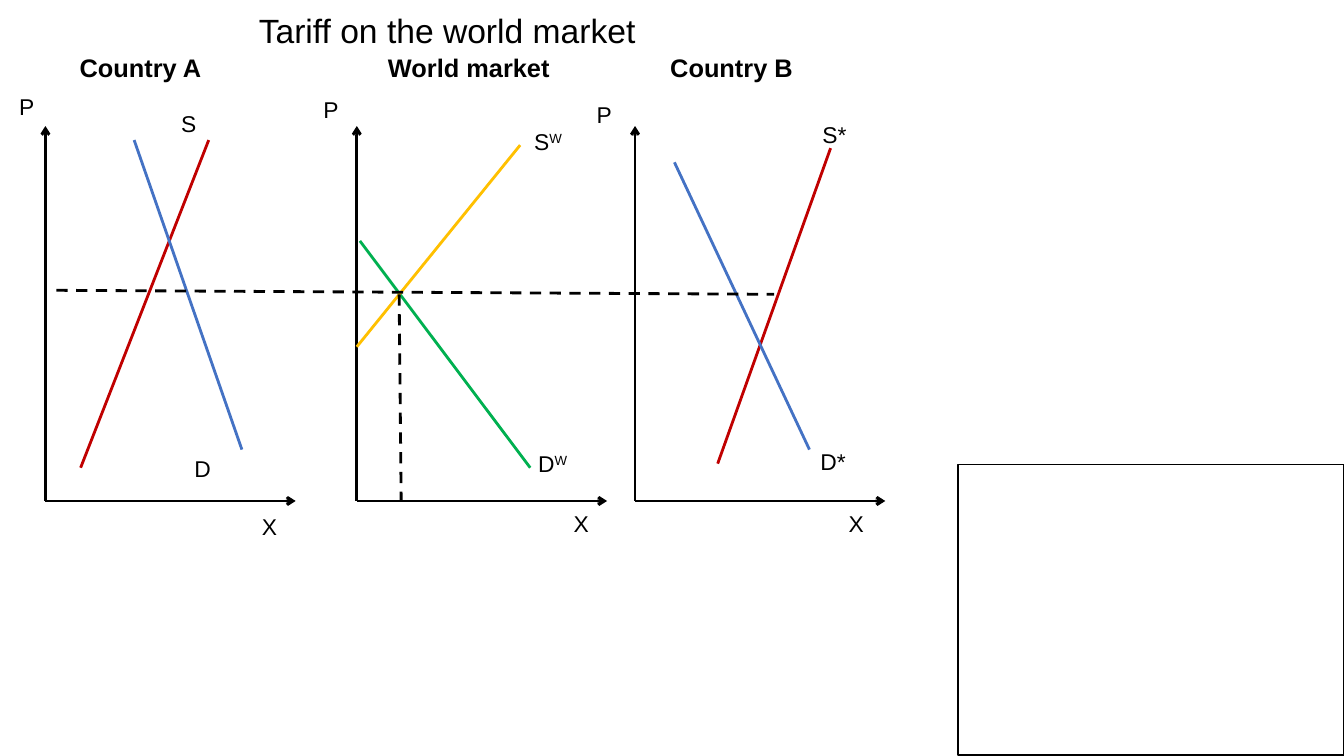
from dataclasses import dataclass

from lxml import etree
from pptx import Presentation
from pptx.dml.color import RGBColor
from pptx.enum.dml import MSO_LINE
from pptx.enum.shapes import MSO_CONNECTOR, MSO_SHAPE
from pptx.enum.text import MSO_ANCHOR, MSO_AUTO_SIZE, PP_ALIGN
from pptx.oxml.ns import qn
from pptx.util import Inches, Pt

STRAIGHT = MSO_CONNECTOR.STRAIGHT
RECTANGLE = MSO_SHAPE.RECTANGLE
DASH = MSO_LINE.DASH
MIDDLE, TOP = MSO_ANCHOR.MIDDLE, MSO_ANCHOR.TOP
CENTER, LEFT = PP_ALIGN.CENTER, PP_ALIGN.LEFT
NO_FIT = MSO_AUTO_SIZE.NONE
TITLE_ONLY = 5


@dataclass(frozen=True)
class Theme:
    font: str = "Arial"
    ink: str = "000000"
    supply: str = "C00000"
    demand: str = "4472C4"
    world_supply: str = "FFC000"
    world_demand: str = "00B050"
    title: float = 24
    heading: float = 18.1
    label: float = 16.3
    stroke: float = 2
    frame: float = 1


class MarketSlide:
    def __init__(self, prs, theme):
        self.theme = theme
        self.col = prs.slide_width / 100
        self.row = prs.slide_height / 100
        self.s = prs.slides.add_slide(prs.slide_layouts[TITLE_ONLY])

    def x(self, cols):
        return round(cols * self.col)

    def y(self, rows):
        return round(rows * self.row)

    def box(self, left, top, width, height):
        return self.x(left), self.y(top), self.x(width), self.y(height)

    def fill_text(self, sp, text, size, bold=False, align=LEFT, anchor=TOP, sup=""):
        tf = sp.text_frame
        tf.text = text
        tf.word_wrap = True
        tf.auto_size = NO_FIT
        tf.vertical_anchor = anchor
        p = tf.paragraphs[0]
        p.alignment = align
        if sup:
            r = p.add_run()
            r.text = sup
            r._r.get_or_add_rPr().set("baseline", "30000")
        for r in p.runs:
            r.font.name = self.theme.font
            r.font.size = Pt(size)
            r.font.bold = bold
            r.font.color.rgb = RGBColor.from_string(self.theme.ink)

    def title(self, text, *place):
        sp = self.s.shapes.title
        sp.left, sp.top, sp.width, sp.height = self.box(*place)
        self.fill_text(sp, text, self.theme.title, align=CENTER, anchor=MIDDLE)

    def heading(self, text, left, width):
        sp = self.s.shapes.add_textbox(*self.box(left, 6.27, width, 5.47))
        self.fill_text(sp, text, self.theme.heading, bold=True)

    def label(self, text, left, top, sup=""):
        sp = self.s.shapes.add_textbox(*self.box(left, top, 4, 5.07))
        self.fill_text(sp, text, self.theme.label, sup=sup)

    def line(self, start, end, color, dashed=False, arrow=False):
        sp = self.s.shapes.add_connector(
            STRAIGHT, self.x(start[0]), self.y(start[1]), self.x(end[0]), self.y(end[1])
        )
        sp.line.color.rgb = RGBColor.from_string(color)
        sp.line.width = Pt(self.theme.stroke)
        if dashed:
            sp.line.dash_style = DASH
        if arrow:
            ln = sp.line._get_or_add_ln()
            etree.SubElement(ln, qn("a:tailEnd"), type="arrow")
        etree.SubElement(sp._element.spPr, qn("a:effectLst"))

    def axes(self, left):
        top, base, length = 16.67, 66.27, 18.62
        for end in ((left, top), (left + length, base)):
            self.line((left, base), end, self.theme.ink, arrow=True)

    def frame(self, *place):
        sp = self.s.shapes.add_shape(RECTANGLE, *self.box(*place))
        sp.shadow.inherit = False
        sp.fill.background()
        sp.line.color.rgb = RGBColor.from_string(self.theme.ink)
        sp.line.width = Pt(self.theme.frame)


def main():
    prs = Presentation()
    prs.slide_width, prs.slide_height = Inches(13.33), Inches(7.5)
    theme = Theme()
    slide = MarketSlide(prs, theme)
    slide.title("Tariff on the world market", 7.58, 0.53, 51.38, 6.8)

    for name, left, width, axis in (
        ("Country A", 5.18, 10.9, 3.38),
        ("World market", 28.13, 15.53, 26.55),
        ("Country B", 49.13, 11.5, 47.25),
    ):
        slide.heading(name, left, width)
        slide.axes(axis)

    for start, end, color in (
        ((6, 61.87), (15.53, 18.53), theme.supply),
        ((9.98, 18.53), (18, 59.47), theme.demand),
        ((53.4, 61.33), (61.8, 19.6), theme.supply),
        ((50.18, 21.47), (60.23, 59.47), theme.demand),
        ((26.78, 31.87), (39.45, 61.87), theme.world_demand),
        ((26.55, 45.87), (38.7, 19.2), theme.world_supply),
    ):
        slide.line(start, end, color)

    slide.line((4.2, 38.4), (57.6, 38.93), theme.ink, dashed=True)
    slide.line((29.7, 38.93), (29.85, 66.13), theme.ink, dashed=True)

    for text, left, top, sup in (
        ("P", 0.68, 11.6, ""),
        ("X", 18.75, 67.2, ""),
        ("S", 12.75, 13.87, ""),
        ("D", 13.73, 59.47, ""),
        ("P", 23.33, 12, ""),
        ("X", 41.95, 66.8, ""),
        ("S", 39, 16.27, "W"),
        ("D", 39.3, 58.8, "W"),
        ("P", 43.65, 12.67, ""),
        ("X", 62.4, 66.8, ""),
        ("S*", 60.45, 15.33, ""),
        ("D*", 60.3, 58.53, ""),
    ):
        slide.label(text, left, top, sup)

    slide.frame(71.27, 61.47, 28.73, 38.4)
    prs.save("out.pptx")


if __name__ == "__main__":
    main()
